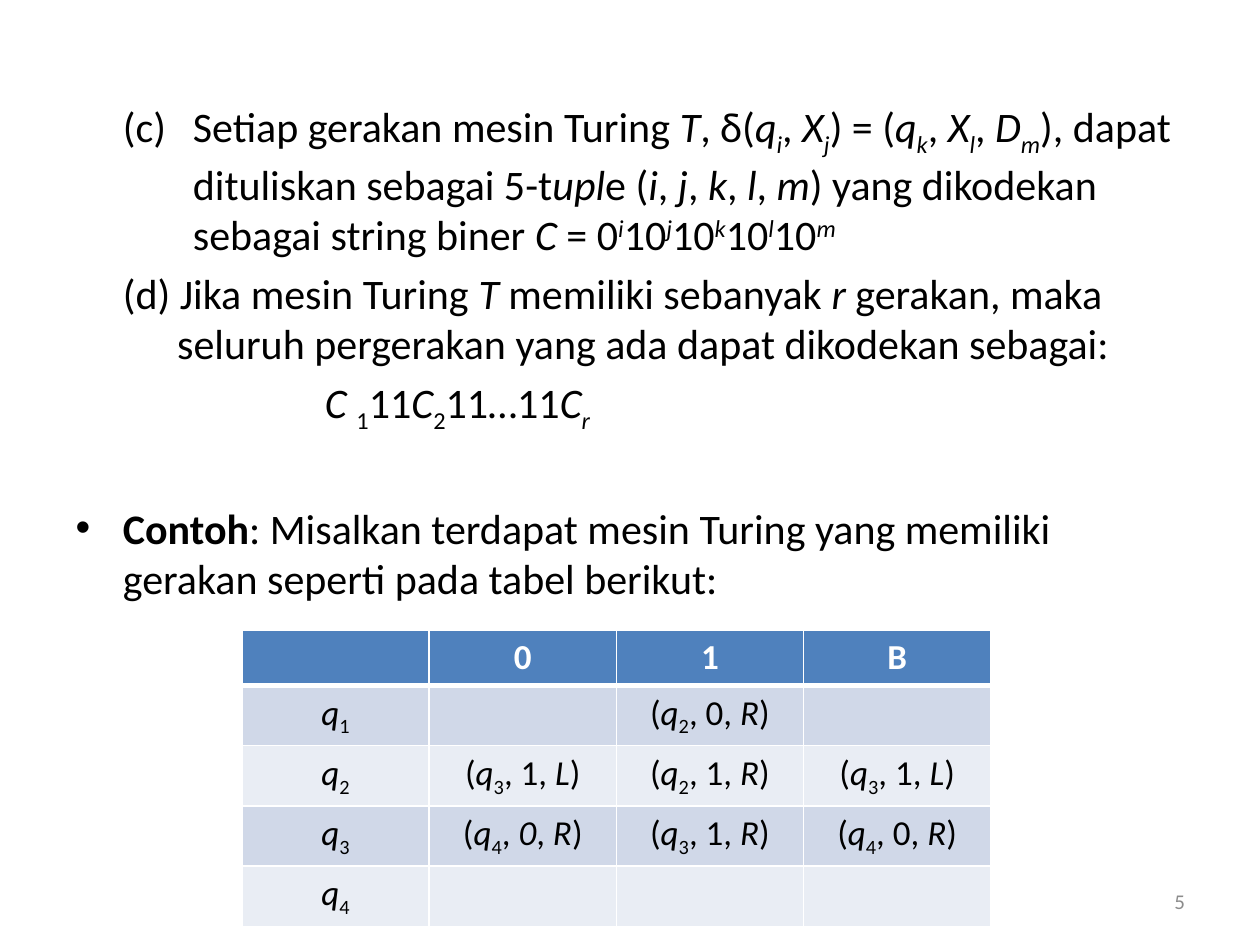
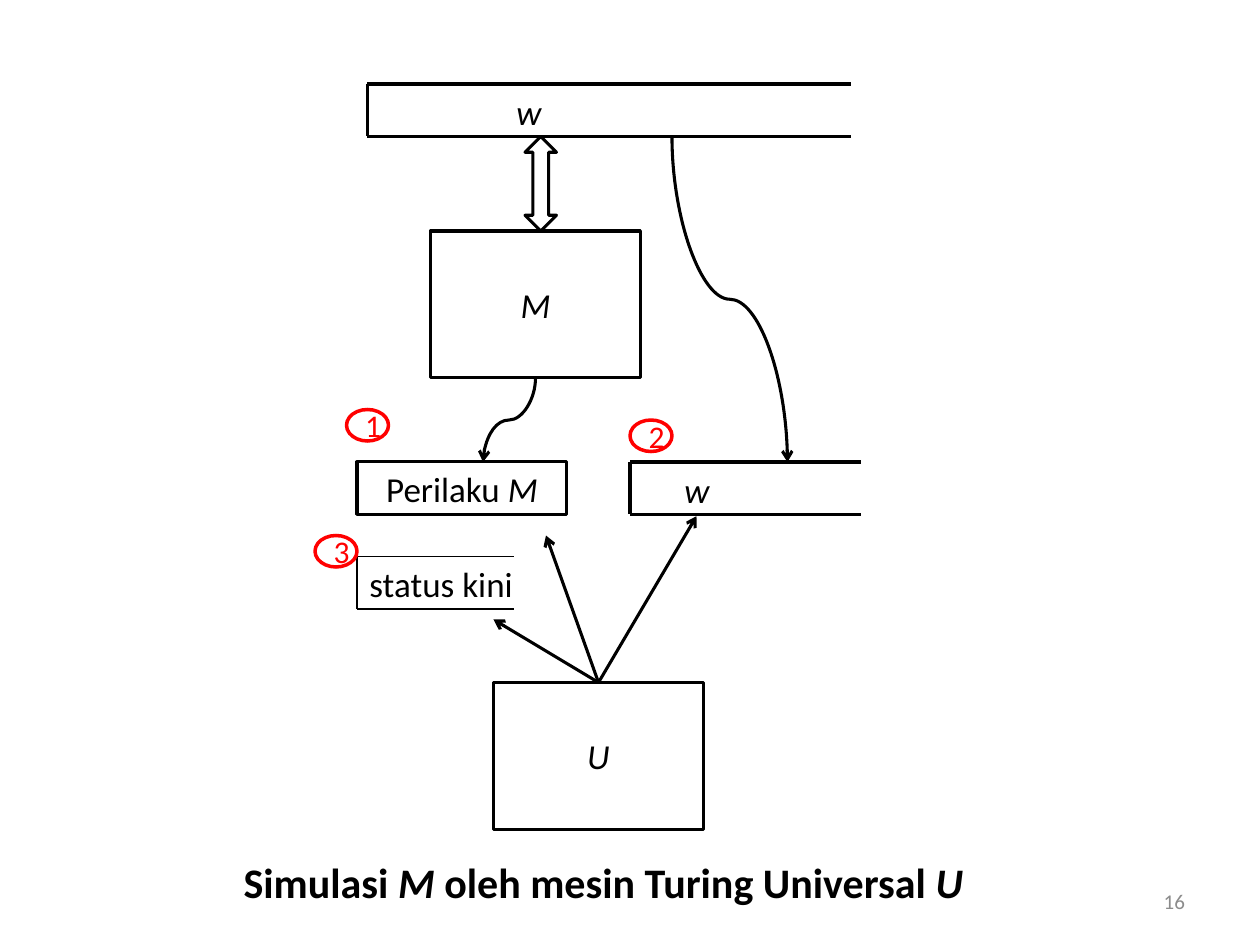
from lxml.etree import SubElement
from pptx import Presentation
from pptx.dml.color import RGBColor
from pptx.enum.shapes import MSO_CONNECTOR as CONN, MSO_SHAPE as SHAPE
from pptx.enum.text import MSO_ANCHOR as ANCHOR, MSO_AUTO_SIZE as AUTO, PP_ALIGN as ALIGN
from pptx.oxml.ns import qn
from pptx.util import Pt

BLACK = RGBColor(0, 0, 0)
WHITE = RGBColor(255, 255, 255)
RED = RGBColor(255, 0, 0)
GRAY = RGBColor(0x8C, 0x8C, 0x8C)
HEADER = RGBColor(0x4F, 0x81, 0xBD)
BANDS = (RGBColor(0xD0, 0xD8, 0xE8), RGBColor(0xE9, 0xED, 0xF4))
FONT = "Calibri"
LINE = 1.75
BASELINE = {"_": "-25000", "^": "30000"}

ENCODING = [
    ("(c)\tSetiap gerakan mesin Turing *T*, δ(*q_i_*, *X_j_*) = (*q_k_*, *X_l_*, *D_m_*), "
     "dapat dituliskan sebagai 5-t*upl*e (*i*, *j*, *k*, *l*, *m*) yang dikodekan "
     "sebagai string biner *C* = 0*^i^*10*^j^*10*^k^*10*^l^*10*^m^*",
     dict(left=67, first=-40, bullet=False)),
    ("(d) Jika mesin Turing *T *memiliki sebanyak *r *gerakan, maka seluruh "
     "pergerakan yang ada dapat dikodekan sebagai:",
     dict(left=58, first=-31, bullet=False)),
    ("*C *_1_11*C*_2_11…11*C_r_*", dict(left=142.5, first=0, bullet=False)),
    ("#Contoh#: Misalkan terdapat mesin Turing yang memiliki gerakan seperti "
     "pada tabel berikut:", dict(left=27, first=-27, before=39)),
]

MOVES = [
    ["", "0", "1", "B"],
    ["*q*_1_", "", "(*q*_2_, 0, *R*)", ""],
    ["*q*_2_", "(*q*_3_, 1, *L*)", "(*q*_2_, 1, *R*)", "(*q*_3_, 1, *L*)"],
    ["*q*_3_", "(*q*_4_, *0*, *R*)", "(*q*_3_, 1, *R*)", "(*q*_4_, 0, *R*)"],
    ["*q*_4_", "", "", ""],
]


def add_rich(p, markup, size, color=BLACK, bold=False):
    """In markup, * is italic, # bold, _ subscript and ^ superscript."""
    on, text = set(), ""

    def flush():
        if not text:
            return
        r = p.add_run()
        r.text = text
        fmt = dict(name=FONT, size=Pt(size), bold=bold or "#" in on, italic="*" in on)
        for key, value in fmt.items():
            setattr(r.font, key, value)
        r.font.color.rgb = color
        for mark in on & set(BASELINE):
            r._r.get_or_add_rPr().set("baseline", BASELINE[mark])

    for ch in markup:
        if ch in "*#_^":
            flush()
            text = ""
            on ^= {ch}
        else:
            text += ch
    flush()


def place(sp, x, y, w, h):
    for key, value in dict(left=x, top=y, width=w, height=h).items():
        setattr(sp, key, Pt(value))


def set_frame(tf, anchor=ANCHOR.TOP):
    fmt = dict(word_wrap=True, auto_size=AUTO.NONE, vertical_anchor=anchor)
    for key, value in fmt.items():
        setattr(tf, key, value)


def add_label(s, box, markup, size, color=BLACK, align=ALIGN.LEFT, anchor=ANCHOR.TOP):
    tf = s.shapes.add_textbox(*map(Pt, box)).text_frame
    set_frame(tf, anchor)
    tf.paragraphs[0].alignment = align
    add_rich(tf.paragraphs[0], markup, size, color)


def add_number(s, number):
    add_label(s, (516.2, 500.5, 168, 28.8), number, 12, GRAY, ALIGN.RIGHT, ANCHOR.MIDDLE)


def add_outline(s, kind, box, markup="", size=20, color=BLACK, width=LINE):
    sp = s.shapes.add_shape(kind, *map(Pt, box))
    sp.shadow.inherit = False
    sp.fill.background()
    sp.line.color.rgb = color
    sp.line.width = Pt(width)
    if markup:
        set_frame(sp.text_frame, ANCHOR.MIDDLE)
        p = sp.text_frame.paragraphs[0]
        p.alignment = ALIGN.CENTER
        add_rich(p, markup, size, color)


def add_line(s, x1, y1, x2, y2, width=LINE, arrow=False, kind=CONN.STRAIGHT):
    c = s.shapes.add_connector(kind, *map(Pt, (x1, y1, x2, y2)))
    c.line.color.rgb = BLACK
    c.line.width = Pt(width)
    if arrow:
        SubElement(c.line._get_or_add_ln(), qn("a:tailEnd"), type="arrow")
    SubElement(c._element.spPr, qn("a:effectLst"))
    return c


def add_drop_curve(s, x1, y1, x2, y2):
    cx, cy = (x1 + x2) / 2, (y1 + y2) / 2
    half_w, half_h = (y2 - y1) / 2, abs(x2 - x1) / 2
    side = 1 if x2 > x1 else -1
    c = add_line(s, cx + side * half_w, cy - half_h, cx - side * half_w, cy + half_h,
                 arrow=True, kind=CONN.CURVE)
    angle = 270 if side > 0 else 90
    c._element.spPr.find(qn("a:xfrm")).set("rot", str(angle * 60000))


def add_tape(s, x, y, w, markup, offset, width=LINE):
    h = 30
    for edge in ((x, y, x + w, y), (x, y + h, x + w, y + h), (x, y, x, y + h)):
        add_line(s, *edge, width)
    add_label(s, (x + offset, y, 110, 31.5), markup, 20)


def add_encoding(s, box):
    body = s.placeholders[1]
    place(body, *box)
    tf = body.text_frame
    set_frame(tf)
    for i, (markup, fmt) in enumerate(ENCODING):
        p = tf.add_paragraph() if i else tf.paragraphs[0]
        pPr = p._p.get_or_add_pPr()
        pPr.set("marL", str(Pt(fmt["left"])))
        pPr.set("indent", str(Pt(fmt["first"])))
        if "before" in fmt:
            p.space_before = Pt(fmt["before"])
        if not fmt.get("bullet", True):
            SubElement(pPr, qn("a:buNone"))
        add_rich(p, markup, 24)


def set_borders(cell, header):
    tcPr = cell._tc.get_or_add_tcPr()
    for side in "LRTB":
        width = 3 if header and side == "B" else 1
        ln = SubElement(tcPr, qn("a:ln" + side), w=str(Pt(width)))
        fill = SubElement(ln, qn("a:solidFill"))
        SubElement(fill, qn("a:srgbClr"), val=str(WHITE))


def add_moves(s, x, y, col_w, header_h, row_h):
    rows, cols = len(MOVES), len(MOVES[0])
    size = (col_w * cols, header_h + row_h * (rows - 1))
    table = s.shapes.add_table(rows, cols, *map(Pt, (x, y, *size))).table
    for col in table.columns:
        col.width = Pt(col_w)
    for i, row in enumerate(MOVES):
        header = i == 0
        table.rows[i].height = Pt(header_h if header else row_h)
        for j, markup in enumerate(row):
            cell = table.cell(i, j)
            set_borders(cell, header)
            cell.fill.solid()
            cell.fill.fore_color.rgb = HEADER if header else BANDS[(i - 1) % 2]
            p = cell.text_frame.paragraphs[0]
            p.alignment = ALIGN.CENTER
            add_rich(p, markup, 20, WHITE if header else BLACK, header)


def add_simulation(s, x, y):
    add_tape(s, x + 30, y, 276, "*w*", 78)
    add_tape(s, x + 180, y + 216, 132, "*w*", 24)
    add_tape(s, x + 24, y + 270, 90, "status kini", 0, 0.75)
    add_outline(s, SHAPE.UP_DOWN_ARROW, (x + 120, y + 30, 18, 54))
    for dx, dy, h, markup in ((66, 84, 84, "*M*"), (24, 216, 30, "Perilaku* M*"),
                              (102, 342, 84, "*U*")):
        add_outline(s, SHAPE.RECTANGLE, (x + dx, y + dy, 120, h), markup)
    add_drop_curve(s, x + 126, y + 168, x + 96, y + 216)
    add_drop_curve(s, x + 204, y + 30, x + 270, y + 216)
    for dx, dy in ((218, 247), (102, 306), (132, 258)):
        add_line(s, x + 162, y + 342, x + dx, y + dy, arrow=True)
    for n, (dx, dy) in enumerate(((18, 186), (180, 192), (0, 258)), 1):
        add_outline(s, SHAPE.OVAL, (x + dx, y + dy, 24, 18), str(n), 18, RED, 2)


def add_caption(s, box, markup):
    title = s.shapes.title
    place(title, *box)
    set_frame(title.text_frame)
    p = title.text_frame.paragraphs[0]
    p.alignment = ALIGN.LEFT
    add_rich(p, markup, 24, bold=True)


def encoding_slide(prs):
    s = prs.slides.add_slide(prs.slide_layouts[1])
    title = s.shapes.title._element
    title.getparent().remove(title)
    add_encoding(s, (36, 54, 648, 428.4))
    add_number(s, "5")
    add_moves(s, 138.25, 360, 107, 31.5, 34.3)


def simulation_slide(prs):
    s = prs.slides.add_slide(prs.slide_layouts[5])
    add_caption(s, (132, 486, 440, 36), "Simulasi *M *oleh mesin Turing Universal *U*")
    add_number(s, "16")
    add_simulation(s, 180, 48)


def main():
    prs = Presentation()
    prs.slide_width, prs.slide_height = Pt(720), Pt(540)
    encoding_slide(prs)
    simulation_slide(prs)
    prs.save("out.pptx")


if __name__ == "__main__":
    main()
